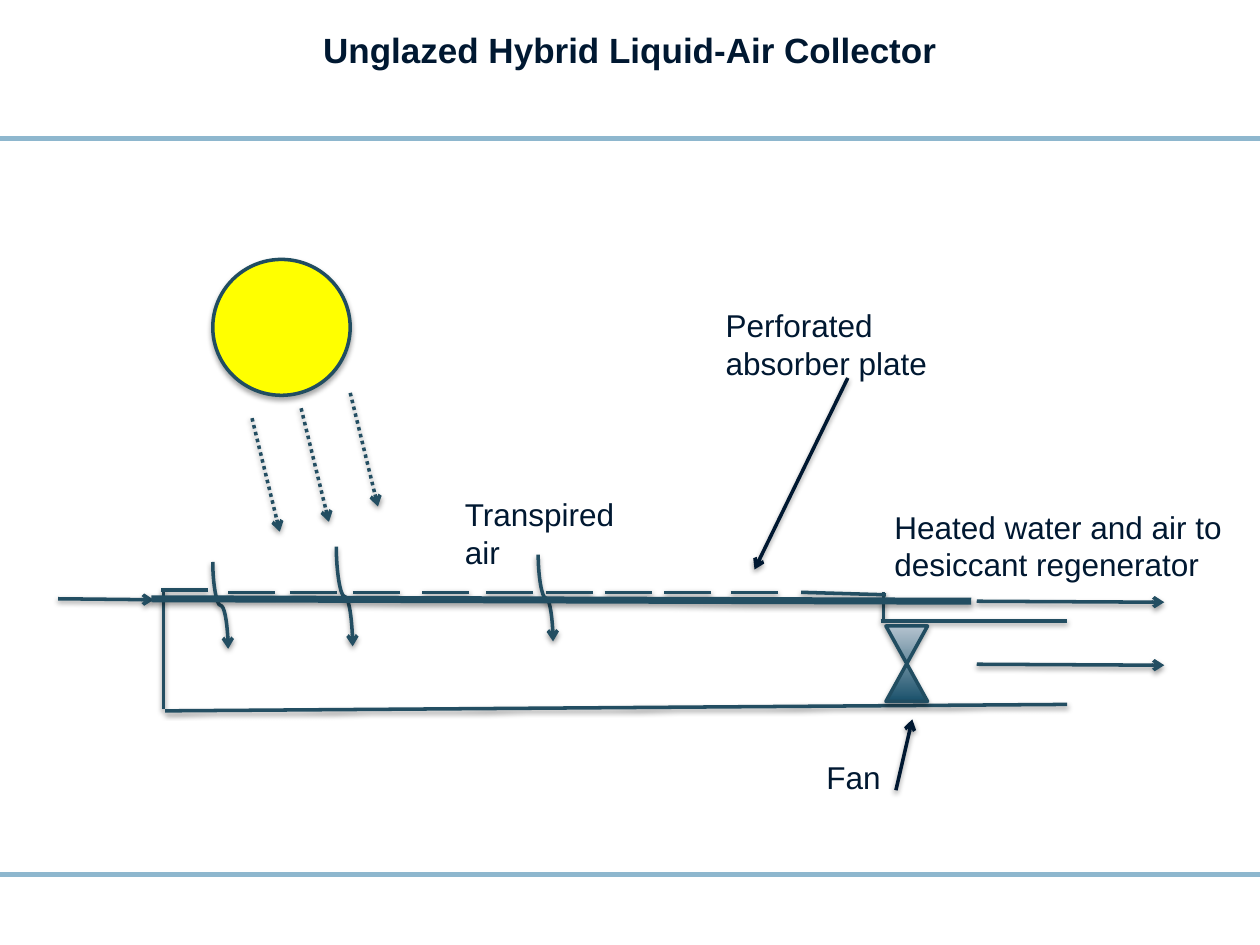
"""Build the slide of an unglazed hybrid liquid-air collector."""
from lxml import etree
from pptx import Presentation
from pptx.dml.color import RGBColor
from pptx.enum.dml import MSO_LINE
from pptx.enum.shapes import MSO_CONNECTOR, MSO_SHAPE
from pptx.enum.text import MSO_ANCHOR, MSO_AUTO_SIZE, PP_ALIGN
from pptx.oxml.ns import qn
from pptx.util import Cm, Pt

STRAIGHT, CURVE = MSO_CONNECTOR.STRAIGHT, MSO_CONNECTOR.CURVE
OVAL, COLLATE = MSO_SHAPE.OVAL, MSO_SHAPE.FLOWCHART_COLLATE
DOTTED = MSO_LINE.ROUND_DOT
MIDDLE, CENTER, LEFT = MSO_ANCHOR.MIDDLE, PP_ALIGN.CENTER, PP_ALIGN.LEFT
GROW = MSO_AUTO_SIZE.SHAPE_TO_FIT_TEXT

INK, STEEL, EDGE, RULE = "001831", "234E62", "214D61", "8EB7CE"
SLIDE_WIDTH, SLIDE_HEIGHT = 25.4, 19.05
LINE_SHADOW = {"distance": 1.6, "opacity": 38}
SHAPE_SHADOW = {"distance": 1.8, "opacity": 35}


def color(value):
    return RGBColor.from_string(value)


def apply(target, values):
    for name, value in values.items():
        setattr(target, name, value)


class Diagram:
    font = {"name": "Arial", "size": Pt(18)}
    label_frame = {"word_wrap": True, "auto_size": GROW}
    title_frame = {"word_wrap": True, "vertical_anchor": MIDDLE, "margin_left": Cm(0.2),
                   "margin_right": Cm(0.2), "margin_top": 0, "margin_bottom": Cm(0.4)}

    def __init__(self, slide):
        self.shapes = slide.shapes

    def shadow(self, item, distance=None, opacity=None):
        effects = etree.SubElement(item._element.spPr, qn("a:effectLst"))
        if distance:
            outer = etree.SubElement(effects, qn("a:outerShdw"), blurRad=str(Pt(3.1)),
                                     dist=str(Pt(distance)), dir="5400000", rotWithShape="0")
            black = etree.SubElement(outer, qn("a:srgbClr"), val="000000")
            etree.SubElement(black, qn("a:alpha"), val=str(opacity * 1000))

    def line(self, start, end, hue=STEEL, width=2, arrow=False, dash=None,
             shadow=LINE_SHADOW, kind=STRAIGHT):
        connector = self.shapes.add_connector(kind, *map(Cm, (*start, *end)))
        connector.line.color.rgb = color(hue)
        connector.line.width = Pt(width)
        if dash:
            connector.line.dash_style = dash
        if arrow:
            outline = connector._element.spPr.find(qn("a:ln"))
            etree.SubElement(outline, qn("a:tailEnd"), type="arrow")
        self.shadow(connector, **shadow)
        return connector

    def curve(self, start, end):
        middle_x, middle_y = (start[0] + end[0]) / 2, (start[1] + end[1]) / 2
        half_run, half_rise = (end[1] - start[1]) / 2, (end[0] - start[0]) / 2
        connector = self.line((middle_x + half_run, middle_y - half_rise),
                              (middle_x - half_run, middle_y + half_rise),
                              arrow=True, kind=CURVE)
        connector._element.spPr.find(qn("a:xfrm")).set("rot", "16200000")

    def shape(self, kind, place, fills):
        shape = self.shapes.add_shape(kind, *map(Cm, place))
        if len(fills) == 1:
            shape.fill.solid()
            shape.fill.fore_color.rgb = color(fills[0])
        else:
            shape.fill.gradient()
            shape.fill.gradient_angle = 90
            for stop, hue in zip(shape.fill.gradient_stops, fills):
                stop.color.rgb = color(hue)
        shape.line.color.rgb = color(EDGE)
        shape.line.width = Pt(2)
        self.shadow(shape, **SHAPE_SHADOW)

    def text(self, words, place, frame=label_frame, align=LEFT, **font):
        box = self.shapes.add_textbox(*map(Cm, place))
        apply(box.text_frame, frame)
        para = box.text_frame.paragraphs[0]
        para.alignment = align
        span = para.add_run()
        span.text = words
        apply(span.font, {**self.font, **font})
        span.font.color.rgb = color(INK)


def main():
    deck = Presentation()
    deck.slide_width, deck.slide_height = Cm(SLIDE_WIDTH), Cm(SLIDE_HEIGHT)
    page = Diagram(deck.slides.add_slide(deck.slide_layouts[6]))

    for y in (2.79, 17.63):
        page.line((0, y), (SLIDE_WIDTH, y), RULE, 3, shadow={})
    page.text("Unglazed Hybrid Liquid-Air Collector", (0, 0.53, SLIDE_WIDTH, 1.32),
              Diagram.title_frame, CENTER, size=Pt(20), bold=True)

    page.line((1.17, 12.07), (3.1, 12.09), arrow=True)
    casing = [((3.3, 11.89), (3.3, 14.3)), ((3.33, 14.33), (21.51, 14.2)),
              ((17.81, 12.47), (17.81, 11.94)), ((3.25, 11.89), (4.19, 11.89)),
              ((16.15, 11.94), (17.86, 11.99)), ((17.75, 12.52), (21.51, 12.52))]
    for start, end in casing:
        page.line(start, end)
    for x in (4.6, 5.84, 7.11, 8.51, 9.8, 11, 12.19, 13.39, 14.73):
        page.line((x, 11.94), (x + 0.95, 11.94))

    for start, end in [((4.29, 11.33), (4.6, 13.08)), ((6.78, 11.02), (7.11, 13.03)),
                       ((10.85, 11.18), (11.15, 12.93))]:
        page.curve(start, end)

    page.shape(OVAL, (4.29, 5.23, 2.77, 2.74), ["FFFF00"])
    for x, y in ((5.08, 8.43), (6.07, 8.23), (7.06, 7.92)):
        page.line((x, y), (x + 0.56, y + 2.29), arrow=True, dash=DOTTED)

    page.shape(COLLATE, (17.86, 12.62, 0.84, 1.52), ["1A516B", "B4C3CF"])
    for start, end in [((18.06, 15.93), (18.39, 14.5)), ((17.09, 7.62), (15.21, 11.48))]:
        page.line(start, end, INK, arrow=True)
    for y in (12.12, 13.39):
        page.line((19.69, y), (23.47, y + 0.02), arrow=True)
    page.line((3.05, 12.07), (19.58, 12.12), width=4)

    labels = {"Heated water and air to desiccant regenerator": (17.78, 10.11, 7.16, 1.8),
              "Transpired air": (9.12, 9.86, 3.73, 1.8),
              "Fan": (16.41, 15.16, 4.32, 1.02),
              "Perforated absorber plate": (14.38, 6.05, 5.38, 1.8)}
    for words, place in labels.items():
        page.text(words, place)

    deck.save("out.pptx")


if __name__ == "__main__":
    main()
